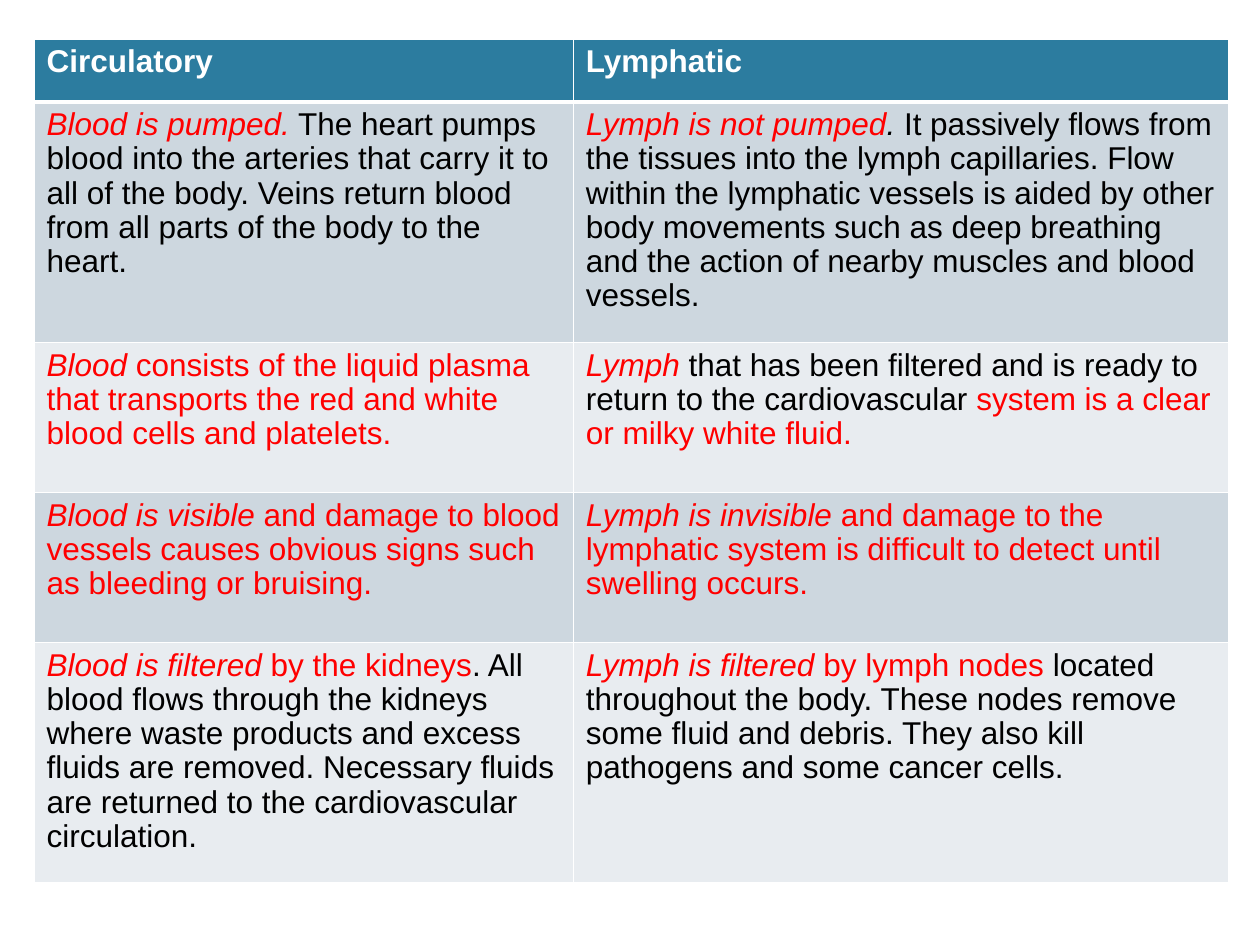
from pptx import Presentation
from pptx.dml.color import RGBColor as Color
from pptx.oxml.ns import qn
from pptx.util import Inches, Pt
from lxml.etree import SubElement

THEME = {
    "font": "Arial", "size": Pt(18), "spacing": 0.97,
    "header": "2C7C9F", "bands": ("CDD7DF", "E8ECF0"),
    "white": "FFFFFF", "black": "000000", "red": "FF0000",
    "line": Pt(1), "header_line": Pt(3),
}

# Each run is (text, colour, style)
ROWS = [
    ([("Circulatory", "white", "bold")],
     [("Lymphatic", "white", "bold")]),
    ([("Blood is pumped.", "red", "italic"),
      (" The heart pumps blood into the arteries that carry it to all of the body. "
       "Veins return blood from all parts of the body to the heart.", "black", "")],
     [("Lymph is not pumped", "red", "italic"),
      (". ", "black", "italic"),
      ("It passively flows from the tissues into the lymph capillaries. Flow within the "
       "lymphatic vessels is aided by other body movements such as deep breathing and the "
       "action of nearby muscles and blood vessels.", "black", "")]),
    ([("Blood", "red", "italic"),
      (" consists of the liquid plasma that transports the red and white blood cells "
       "and platelets.", "red", "")],
     [("Lymph ", "red", "italic"),
      ("that has been filtered and is ready to return to the cardiovascular ", "black", ""),
      ("system is a clear or milky white fluid.", "red", "")]),
    ([("Blood is visible", "red", "italic"),
      (" and damage to blood vessels causes obvious signs such as bleeding or bruising.",
       "red", "")],
     [("Lymph is invisible", "red", "italic"),
      (" and damage to the lymphatic system is difficult to detect until swelling occurs.",
       "red", "")]),
    ([("Blood is filtered", "red", "italic"),
      (" by the kidneys", "red", ""),
      (". All blood flows through the kidneys where waste products and excess fluids are "
       "removed. Necessary fluids are returned to the cardiovascular circulation.",
       "black", "")],
     [("Lymph is filtered", "red", "italic"),
      (" by lymph nodes ", "red", ""),
      ("located throughout the body. These nodes remove some fluid and debris. They also "
       "kill pathogens and some cancer cells.", "black", "")]),
]
COLUMN_WIDTHS = [Inches(width) for width in (4.28, 5.2)]
ROW_HEIGHTS = [Inches(height) for height in (0.5, 1.91, 1.19, 1.19, 1.91)]


def add_border(cell, side, width):
    properties = cell._tc.get_or_add_tcPr()
    line = SubElement(properties, qn(f"a:ln{side}"), w=str(width))
    fill = SubElement(line, qn("a:solidFill"))
    SubElement(fill, qn("a:srgbClr"), val=THEME["white"])


# Slide
presentation = Presentation()
presentation.slide_width, presentation.slide_height = Inches(10), Inches(7.5)
slide = presentation.slides.add_slide(presentation.slide_layouts[6])

# Table grid
shape = slide.shapes.add_table(
    len(ROWS), len(COLUMN_WIDTHS), Inches(0.27), Inches(0.31),
    sum(COLUMN_WIDTHS), sum(ROW_HEIGHTS))
table = shape.table
for column, width in zip(table.columns, COLUMN_WIDTHS):
    column.width = width
for row, height in zip(table.rows, ROW_HEIGHTS):
    row.height = height

# Cells: borders come before the fill in the cell's properties
for row_index, row in enumerate(ROWS):
    band = THEME["bands"][(row_index - 1) % 2] if row_index else THEME["header"]
    for column_index, runs in enumerate(row):
        cell = table.cell(row_index, column_index)
        for side in "LRTB":
            header_edge = (row_index, side) in ((0, "B"), (1, "T"))
            add_border(cell, side, THEME["header_line" if header_edge else "line"])
        cell.fill.solid()
        cell.fill.fore_color.rgb = Color.from_string(band)

        paragraph = cell.text_frame.paragraphs[0]
        paragraph.line_spacing = THEME["spacing"]
        for text, colour, style in runs:
            run = paragraph.add_run()
            run.text = text
            run.font.name, run.font.size = THEME["font"], THEME["size"]
            run.font.bold, run.font.italic = style == "bold", style == "italic"
            run.font.color.rgb = Color.from_string(THEME[colour])

presentation.save("out.pptx")
